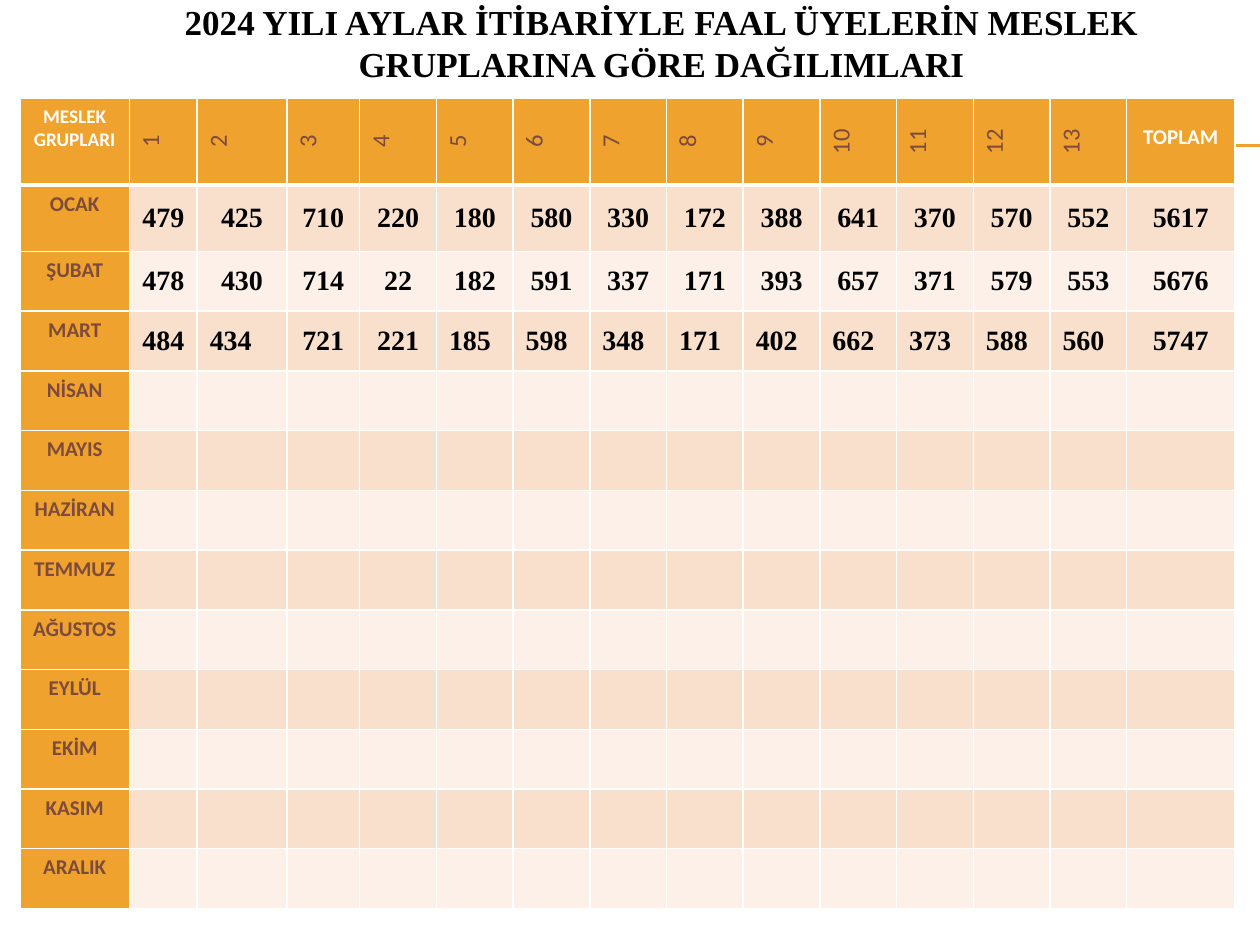
"""Build the slide of active members per month and occupational group for 2024."""
from lxml.etree import SubElement
from pptx import Presentation
from pptx.dml.color import RGBColor
from pptx.enum.shapes import MSO_CONNECTOR
from pptx.enum.text import MSO_ANCHOR, MSO_AUTO_SIZE, PP_ALIGN
from pptx.oxml.ns import qn
from pptx.util import Pt

TITLE = "2024 YILI AYLAR İTİBARİYLE FAAL ÜYELERİN MESLEK GRUPLARINA GÖRE DAĞILIMLARI"
GROUPS = [str(number) for number in range(1, 14)]
HEADER = ["MESLEK GRUPLARI", *GROUPS, "TOPLAM"]
MONTHS = ["OCAK", "ŞUBAT", "MART", "NİSAN", "MAYIS", "HAZİRAN", "TEMMUZ",
          "AĞUSTOS", "EYLÜL", "EKİM", "KASIM", "ARALIK"]
MEMBERS = {
    "OCAK": [479, 425, 710, 220, 180, 580, 330, 172, 388, 641, 370, 570, 552, 5617],
    "ŞUBAT": [478, 430, 714, 22, 182, 591, 337, 171, 393, 657, 371, 579, 553, 5676],
    "MART": [484, 434, 721, 221, 185, 598, 348, 171, 402, 662, 373, 588, 560, 5747],
}
LEFT_ALIGNED = {("MART", group) for group in (2, *range(5, 14))}

ORANGE = RGBColor(0xF0, 0xA2, 0x2E)
BROWN = RGBColor(0x7C, 0x4B, 0x3B)
BLACK = RGBColor(0, 0, 0)
WHITE = RGBColor(0xFF, 0xFF, 0xFF)
BANDS = [RGBColor(0xF9, 0xE0, 0xCD), RGBColor(0xFC, 0xF0, 0xE8)]
SANS, SERIF = "Calibri", "Times New Roman"

COLUMN_WIDTHS = [62.6, 38.7, 51.2, 41.7] + [43.84] * 10 + [61.8]
ROW_HEIGHTS = [49.5, 38] + [34.14] * 11
TABLE_LEFT, TABLE_TOP = 11.4, 56.2
RULE_LEFT, RULE_RIGHT, RULE_TOPS = 40.3, 720, (82.8, 83.5)


def write(frame, text, size, font, color, bold=True, align=PP_ALIGN.CENTER):
    paragraph = frame.paragraphs[0]
    paragraph.alignment = align
    run = paragraph.add_run()
    run.text = text
    run.font.size = Pt(size)
    run.font.name = font
    run.font.bold = bold
    run.font.color.rgb = color


def add_rule(slide, top):
    rule = slide.shapes.add_connector(
        MSO_CONNECTOR.STRAIGHT, Pt(RULE_LEFT), Pt(top), Pt(RULE_RIGHT), Pt(top))
    rule.line.color.rgb = ORANGE
    rule.line.width = Pt(0.75)
    SubElement(rule._element.spPr, qn("a:effectLst"))


def style_cell(cell, fill, top=1, bottom=1):
    properties = cell._tc.get_or_add_tcPr()
    for side, width in (("L", 1), ("R", 1), ("T", top), ("B", bottom)):
        border = SubElement(properties, qn(f"a:ln{side}"), w=str(Pt(width)))
        paint = SubElement(border, qn("a:solidFill"))
        SubElement(paint, qn("a:srgbClr"), val=str(WHITE))
    cell.fill.solid()
    cell.fill.fore_color.rgb = fill


def fill_header(table):
    for column, label in enumerate(HEADER):
        cell = table.cell(0, column)
        style_cell(cell, ORANGE, bottom=3)
        if label in GROUPS:
            cell._tc.get_or_add_tcPr().set("vert", "vert270")
            write(cell.text_frame, label, 14, SANS, BROWN, bold=False)
        elif label == "TOPLAM":
            cell.vertical_anchor = MSO_ANCHOR.BOTTOM
            cell.margin_bottom = Pt(20)
            write(cell.text_frame, label, 12, SANS, WHITE)
        else:
            write(cell.text_frame, label, 11, SANS, WHITE)


def fill_month(table, row, month):
    top = 3 if row == 1 else 1
    label = table.cell(row, 0)
    style_cell(label, ORANGE, top)
    write(label.text_frame, month, 12, SANS, BROWN)
    for column in range(1, len(HEADER)):
        style_cell(table.cell(row, column), BANDS[(row - 1) % 2], top)
    for column, count in enumerate(MEMBERS.get(month, []), 1):
        cell = table.cell(row, column)
        cell.vertical_anchor = MSO_ANCHOR.MIDDLE
        align = PP_ALIGN.LEFT if (month, column) in LEFT_ALIGNED else PP_ALIGN.CENTER
        write(cell.text_frame, str(count), 16, SERIF, BLACK, align=align)


def main():
    deck = Presentation()
    deck.slide_width, deck.slide_height = Pt(720), Pt(540)
    slide = deck.slides.add_slide(deck.slide_layouts[5])

    title = slide.shapes.title
    title.left, title.top, title.width, title.height = Pt(36), Pt(0), Pt(684), Pt(48.5)
    title.text_frame.word_wrap = True
    title.text_frame.auto_size = MSO_AUTO_SIZE.NONE
    title.text_frame.vertical_anchor = MSO_ANCHOR.MIDDLE
    write(title.text_frame, TITLE, 20, SERIF, BLACK)

    for top in RULE_TOPS:
        add_rule(slide, top)

    table = slide.shapes.add_table(
        len(ROW_HEIGHTS), len(COLUMN_WIDTHS), Pt(TABLE_LEFT), Pt(TABLE_TOP),
        Pt(sum(COLUMN_WIDTHS)), Pt(sum(ROW_HEIGHTS))).table
    for column, width in zip(table.columns, COLUMN_WIDTHS):
        column.width = Pt(width)
    for row, height in zip(table.rows, ROW_HEIGHTS):
        row.height = Pt(height)
    fill_header(table)
    for row, month in enumerate(MONTHS, 1):
        fill_month(table, row, month)

    deck.save("out.pptx")


if __name__ == "__main__":
    main()
